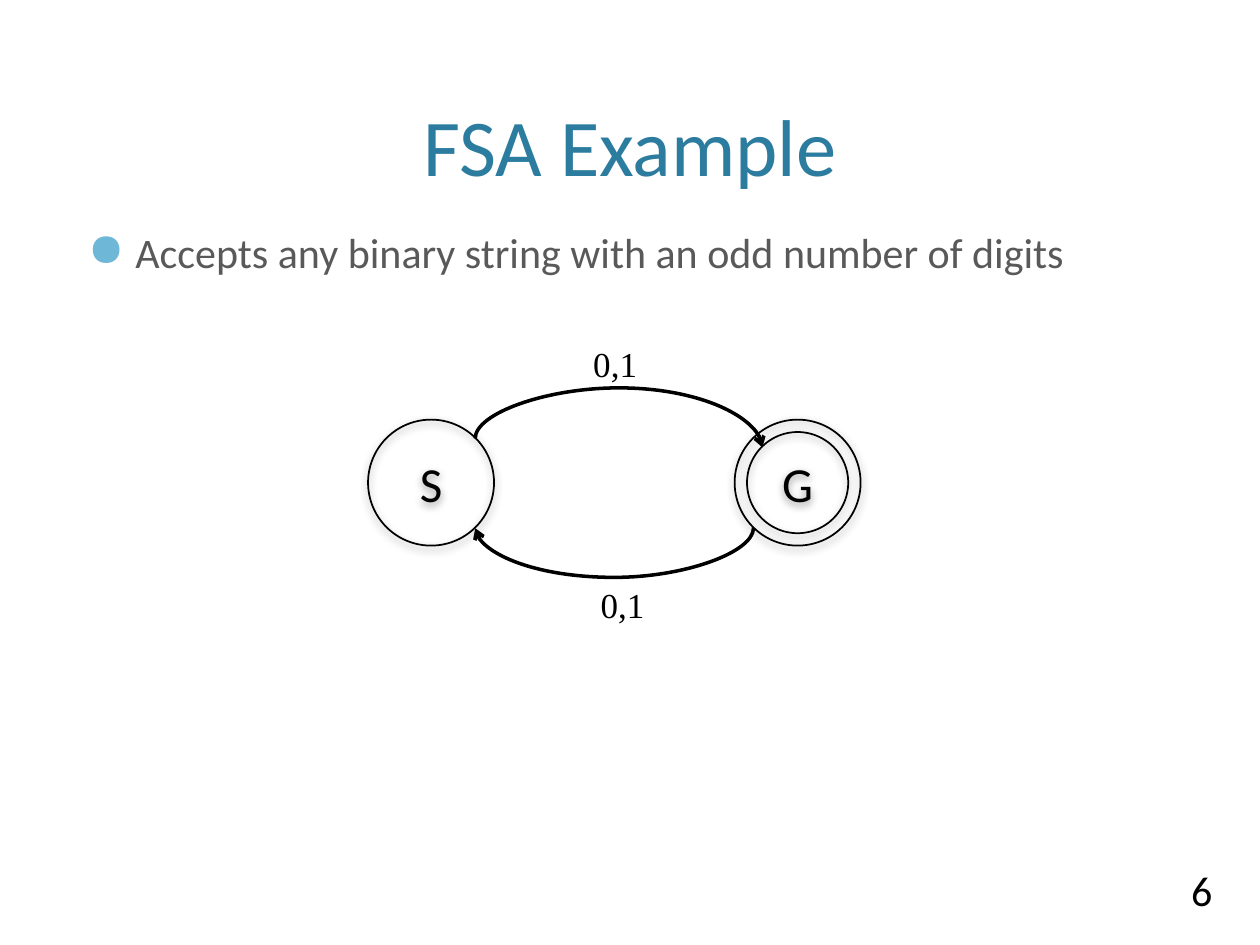
import pptx
import pptx.util
import pptx.dml.color
import pptx.enum.shapes
import pptx.enum.text
from lxml import etree
from pptx.oxml.ns import qn

Cm, Pt = pptx.util.Cm, pptx.util.Pt
RGBColor = pptx.dml.color.RGBColor
ALIGN, ANCHOR = pptx.enum.text.PP_ALIGN, pptx.enum.text.MSO_ANCHOR

BLACK = RGBColor(0x00, 0x00, 0x00)
TITLE_BLUE = RGBColor(0x2C, 0x7C, 0x9F)
BULLET_BLUE = RGBColor(0x6F, 0xB7, 0xD7)
BODY_GREY = RGBColor(0x59, 0x59, 0x59)

# Content: lengths in centimetres
TITLE = "FSA Example"
STATEMENT = "Accepts any binary string with an odd number of digits"
PAGE_NUMBER = "6"
STATE_SIZE, RING_GAP, STATE_TOP = 2.54, 0.25, 8.46
START_STATE = ("S", 7.42)
GOAL_STATE = ("G", 14.81)
# start, end, height of the bend
TRANSITIONS = [
    ((9.58, 8.84), (15.37, 9.02), 7.82),
    ((15.19, 10.64), (9.58, 10.65), 11.64),
]
# text, left, top
TRANSITION_LABELS = [("0,1", 11.71, 6.78), ("0,1", 11.86, 11.63)]


def write(shape, text, size, color, align, anchor, font="Calibri", wrap=True):
    frame = shape.text_frame
    frame.word_wrap = wrap
    frame.vertical_anchor = anchor
    paragraph = frame.paragraphs[0]
    paragraph.text = text
    paragraph.alignment = align
    paragraph.font.size = Pt(size)
    paragraph.font.name = font
    paragraph.font.color.rgb = color
    return paragraph


def add_text(slide, box, *style, **options):
    shape = slide.shapes.add_textbox(*map(Cm, box))
    return write(shape, *style, **options)


def add_bullet(paragraph):
    paragraph.space_before = Pt(20)
    properties = paragraph._p.get_or_add_pPr()
    properties.set("marL", str(Cm(0.96)))
    properties.set("indent", str(Cm(-0.96)))
    color = etree.SubElement(properties, qn("a:buClr"))
    etree.SubElement(color, qn("a:srgbClr"), val=str(BULLET_BLUE))
    etree.SubElement(properties, qn("a:buSzPct"), val="110000")
    etree.SubElement(properties, qn("a:buChar"), char="●")


def add_circle(shapes, left, top, size, label=None):
    circle = shapes.add_shape(pptx.enum.shapes.MSO_SHAPE.OVAL,
                              Cm(left), Cm(top), Cm(size), Cm(size))
    circle.fill.background()
    circle.line.color.rgb = BLACK
    circle.line.width = Pt(1)
    # Soft shadow straight below
    effects = etree.SubElement(circle._element.spPr, qn("a:effectLst"))
    shadow = etree.SubElement(effects, qn("a:outerShdw"), blurRad=str(Pt(5)),
                              dist=str(Pt(2)), dir="5400000", rotWithShape="0")
    color = etree.SubElement(shadow, qn("a:srgbClr"), val=str(BLACK))
    etree.SubElement(color, qn("a:alpha"), val="40000")
    if label:
        write(circle, label, 28, BLACK, ALIGN.CENTER, ANCHOR.MIDDLE)


def add_transition(slide, start, end, bend):
    """Draw a curve that leaves and arrives vertically, by turning a connector."""
    (x1, y1), (x2, y2) = start, end
    width, height = y2 - y1, abs(x2 - x1)
    left, top = (x1 + x2 - width) / 2, (y1 + y2 - height) / 2
    curve = slide.shapes.add_connector(
        pptx.enum.shapes.MSO_CONNECTOR.CURVE,
        Cm(left), Cm(top), Cm(left + width), Cm(top + height))
    curve.line.color.rgb = BLACK
    curve.line.width = Pt(2)
    properties = curve._element.spPr
    frame = properties.find(qn("a:xfrm"))
    frame.set("rot", "16200000" if x2 > x1 else "5400000")
    if x2 > x1:
        frame.set("flipH", "1")
    guides = properties.find(qn("a:prstGeom")).get_or_add_avLst()
    ratio = round((bend - y1) / width * 100000)
    etree.SubElement(guides, qn("a:gd"), name="adj1", fmla=f"val {ratio}")
    etree.SubElement(properties.find(qn("a:ln")), qn("a:tailEnd"), type="arrow")
    etree.SubElement(properties, qn("a:effectLst"))


presentation = pptx.Presentation()
presentation.slide_width, presentation.slide_height = Cm(25.4), Cm(19.05)
slide = presentation.slides.add_slide(presentation.slide_layouts[6])

# Title, statement and page number
add_text(slide, (1.52, 0.3, 22.35, 3.71), TITLE, 46, TITLE_BLUE,
         ALIGN.CENTER, ANCHOR.BOTTOM)
add_bullet(add_text(slide, (1.52, 4.45, 22.35, 2.54), STATEMENT, 24, BODY_GREY,
                    ALIGN.LEFT, ANCHOR.TOP))
add_text(slide, (21.95, 17.42, 2.74, 1.02), PAGE_NUMBER, 24, BLACK,
         ALIGN.RIGHT, ANCHOR.MIDDLE)

# States: the accepting one has a double ring
label, left = START_STATE
add_circle(slide.shapes, left, STATE_TOP, STATE_SIZE, label)
label, left = GOAL_STATE
goal = slide.shapes.add_group_shape()
add_circle(goal.shapes, left, STATE_TOP, STATE_SIZE)
add_circle(goal.shapes, left + RING_GAP, STATE_TOP + RING_GAP,
           STATE_SIZE - 2 * RING_GAP, label)

# Transitions and their labels
for start, end, bend in TRANSITIONS:
    add_transition(slide, start, end, bend)
for text, left, top in TRANSITION_LABELS:
    add_text(slide, (left, top, 1.4, 1.12), text, 20, BLACK, ALIGN.LEFT,
             ANCHOR.TOP, font="Times New Roman", wrap=False)

presentation.save("out.pptx")
